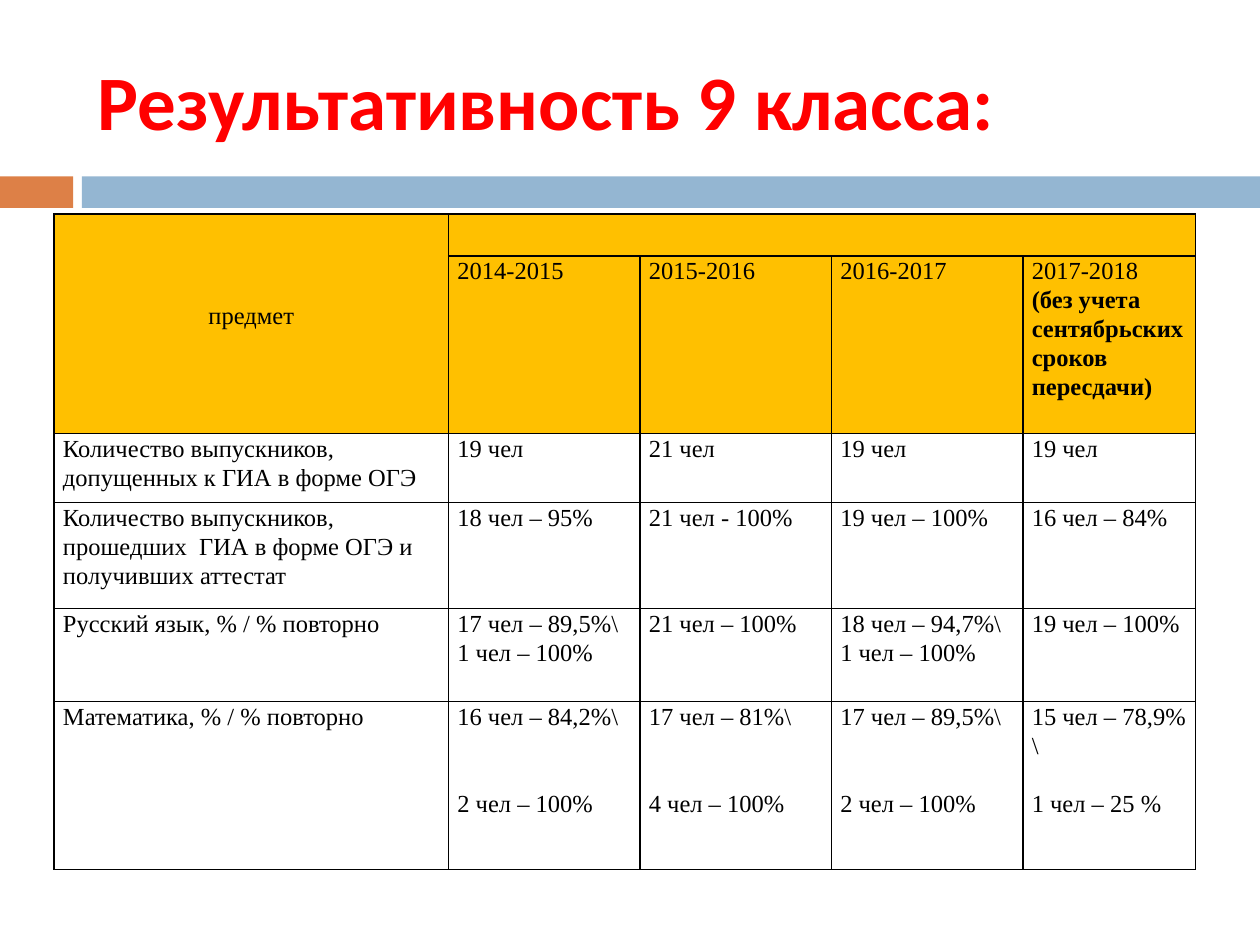
from dataclasses import dataclass

from lxml.etree import SubElement
from pptx import Presentation
from pptx.dml.color import RGBColor
from pptx.enum.shapes import MSO_SHAPE as Shape
from pptx.enum.text import MSO_ANCHOR as Anchor, PP_ALIGN as Align
from pptx.oxml.ns import qn
from pptx.util import Inches, Pt

RED = RGBColor(0xFF, 0x00, 0x00)
BLACK = RGBColor(0x00, 0x00, 0x00)
ORANGE = RGBColor(0xDD, 0x80, 0x47)
BLUE = RGBColor(0x94, 0xB6, 0xD2)
AMBER = RGBColor(0xFF, 0xC0, 0x00)
LINE_PITCH = 16.5
HEADER_ROWS = 2
COLUMN_WIDTHS = (3.13, 1.52, 1.52, 1.52, 1.37)
ROW_HEIGHTS = (0.33, 1.41, 0.55, 0.84, 0.74, 1.33)


@dataclass
class Band:
    left: float
    width: float
    color: RGBColor


@dataclass
class Entry:
    first: str
    second: str = ""
    gap_lines: int = 0
    bold_second: bool = False


BANDS = (Band(0, 0.58, ORANGE), Band(0.65, 9.35, BLUE))
ROWS = (
    (Entry("предмет"), Entry(""), Entry(""), Entry(""), Entry("")),
    (
        Entry(""),
        Entry("2014-2015"),
        Entry("2015-2016"),
        Entry("2016-2017"),
        Entry("2017-2018", "(без учета сентябрьских сроков пересдачи)", bold_second=True),
    ),
    (
        Entry("Количество выпускников, допущенных к ГИА в форме ОГЭ"),
        Entry("19 чел"),
        Entry("21 чел"),
        Entry("19 чел"),
        Entry("19 чел"),
    ),
    (
        Entry("Количество выпускников, прошедших  ГИА в форме ОГЭ и получивших аттестат"),
        Entry("18 чел – 95%"),
        Entry("21 чел - 100%"),
        Entry("19 чел – 100%"),
        Entry("16 чел – 84%"),
    ),
    (
        Entry("Русский язык, % / % повторно"),
        Entry("17 чел – 89,5%\\", "1 чел – 100%"),
        Entry("21 чел – 100%"),
        Entry("18 чел – 94,7%\\", "1 чел – 100%"),
        Entry("19 чел – 100%"),
    ),
    (
        Entry("Математика, % / % повторно"),
        Entry("16 чел – 84,2%\\", "2 чел – 100%", 2),
        Entry("17 чел – 81%\\", "4 чел – 100%", 2),
        Entry("17 чел – 89,5%\\", "2 чел – 100%", 2),
        Entry("15 чел – 78,9%\\", "1 чел – 25 %", 1),
    ),
)


def write(para, text: str, *, font="Times New Roman", size=14, color=BLACK,
          bold=False, align=Align.LEFT, spacing=1.07, before=0.0) -> None:
    para.alignment = align
    para.line_spacing = spacing
    para.space_before = Pt(before)
    para.font.size = Pt(size)
    if not text:
        return
    span = para.add_run()
    span.text = text
    span.font.name = font
    span.font.size = Pt(size)
    span.font.bold = bold
    span.font.color.rgb = color


def draw_band(slide, band: Band) -> None:
    bar = slide.shapes.add_shape(
        Shape.RECTANGLE, Inches(band.left), Inches(1.4), Inches(band.width), Inches(0.25))
    bar.shadow.inherit = False
    bar.fill.solid()
    bar.fill.fore_color.rgb = band.color
    bar.line.fill.background()


def draw_borders(cell) -> None:
    properties = cell._tc.get_or_add_tcPr()
    for side in ("a:lnL", "a:lnR", "a:lnT", "a:lnB"):
        line = SubElement(properties, qn(side), w=str(Pt(1)))
        fill = SubElement(line, qn("a:solidFill"))
        SubElement(fill, qn("a:srgbClr"), val=str(BLACK))


def fill_cell(cell, entry: Entry, is_header: bool) -> None:
    draw_borders(cell)
    cell.margin_left = cell.margin_right = Inches(0.07)
    cell.margin_top = cell.margin_bottom = 0
    if is_header:
        cell.fill.solid()
        cell.fill.fore_color.rgb = AMBER
    else:
        cell.fill.background()
    frame = cell.text_frame
    write(frame.paragraphs[0], entry.first)
    if entry.second:
        write(frame.add_paragraph(), entry.second, bold=entry.bold_second,
              before=entry.gap_lines * LINE_PITCH)


def draw_table(slide) -> None:
    table = slide.shapes.add_table(
        len(ROWS), len(COLUMN_WIDTHS), Inches(0.43), Inches(1.7),
        Inches(sum(COLUMN_WIDTHS)), Inches(sum(ROW_HEIGHTS))).table
    table.first_row = False
    table.horz_banding = False
    for column, width in zip(table.columns, COLUMN_WIDTHS):
        column.width = Inches(width)
    for row, height in zip(table.rows, ROW_HEIGHTS):
        row.height = Inches(height)
    for row_index, entries in enumerate(ROWS):
        for column_index, entry in enumerate(entries):
            fill_cell(table.cell(row_index, column_index), entry, row_index < HEADER_ROWS)
    subject = table.cell(0, 0)
    subject.merge(table.cell(1, 0))
    subject.margin_top = Pt(3 * LINE_PITCH)
    subject.text_frame.paragraphs[0].alignment = Align.CENTER
    table.cell(0, 1).merge(table.cell(0, 4))


def draw_title(slide) -> None:
    title = slide.shapes.title
    title.left, title.top = Inches(0.67), Inches(0.25)
    title.width, title.height = Inches(8.92), Inches(1.08)
    title.text_frame.vertical_anchor = Anchor.MIDDLE
    write(title.text_frame.paragraphs[0], "Результативность 9 класса:",
          font="Calibri", size=44, color=RED, bold=True, spacing=1.0)


def main() -> None:
    deck = Presentation()
    deck.slide_width, deck.slide_height = Inches(10), Inches(7.5)
    slide = deck.slides.add_slide(deck.slide_layouts[5])
    for band in BANDS:
        draw_band(slide, band)
    draw_title(slide)
    draw_table(slide)
    deck.save("out.pptx")


if __name__ == "__main__":
    main()
